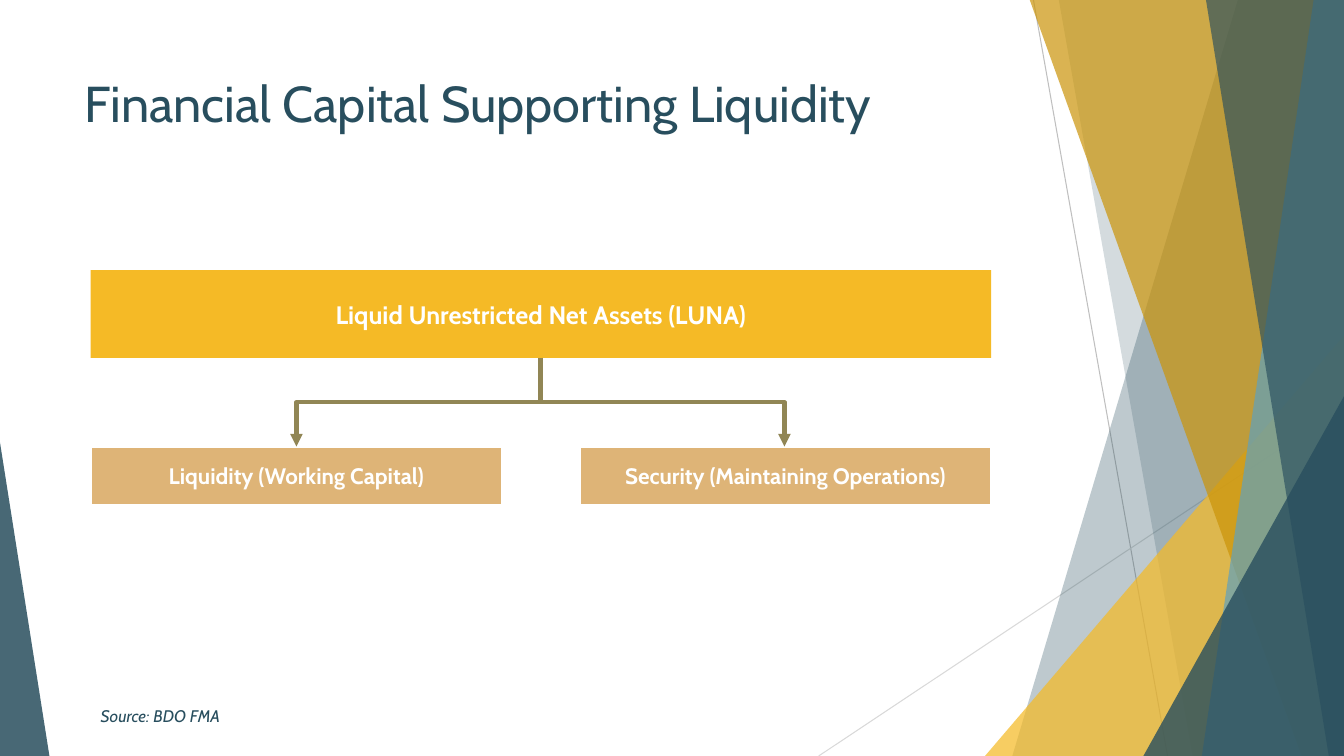
from dataclasses import dataclass

from lxml.etree import SubElement
from pptx import Presentation
from pptx.dml.color import RGBColor
from pptx.enum.shapes import MSO_CONNECTOR, MSO_SHAPE
from pptx.enum.text import MSO_ANCHOR, PP_ALIGN
from pptx.oxml.ns import qn
from pptx.util import Pt

PX = 9144  # EMU per px, 100 px to the inch
WIDTH, HEIGHT = 1333, 750


@dataclass(frozen=True)
class Theme:
    font: str = "Cabin"
    navy: str = "284E5E"
    gold: str = "F5BA26"
    ochre: str = "CB9409"
    sky: str = "61A1BC"
    tan: str = "DEB477"
    olive: str = "918655"
    white: str = "FFFFFF"
    grey: str = "BFBFBF"
    light_grey: str = "D9D9D9"
    title: int = 36
    heading: int = 18
    label: int = 16
    source: int = 12


class Deck:
    def __init__(self, theme):
        self.theme = theme
        self.prs = Presentation()
        self.prs.slide_width = WIDTH * PX
        self.prs.slide_height = HEIGHT * PX
        self.s = self.prs.slides.add_slide(self.prs.slide_layouts[6])

    def paint(self, sp, color, alpha=100):
        sp.shadow.inherit = False
        sp.line.fill.background()
        sp.fill.solid()
        sp.fill.fore_color.rgb = RGBColor.from_string(color)
        if alpha < 100:
            clr = sp._element.spPr.find(qn("a:solidFill"))[0]
            SubElement(clr, qn("a:alpha"), val=str(alpha * 1000))

    def set_text(self, sp, text, size, color, align=PP_ALIGN.LEFT,
                 anchor=MSO_ANCHOR.MIDDLE, bold=False, italic=False):
        tf = sp.text_frame
        tf.word_wrap = True
        tf.vertical_anchor = anchor
        p = tf.paragraphs[0]
        p.text = text
        p.alignment = align
        p.font.name, p.font.size = self.theme.font, Pt(size)
        p.font.bold, p.font.italic = bold, italic
        p.font.color.rgb = RGBColor.from_string(color)

    def text(self, x, y, w, h, text, size, **style):
        sp = self.s.shapes.add_textbox(x * PX, y * PX, w * PX, h * PX)
        self.set_text(sp, text, size, self.theme.navy, **style)

    def box(self, x, y, w, h, text, size, fill, outline=None):
        sp = self.s.shapes.add_shape(MSO_SHAPE.ROUNDED_RECTANGLE,
                                     x * PX, y * PX, w * PX, h * PX)
        sp.adjustments[0] = 0
        self.paint(sp, fill)
        if outline:
            sp.line.color.rgb = RGBColor.from_string(outline)
            sp.line.width = Pt(1.5)
        self.set_text(sp, text, size, self.theme.white, PP_ALIGN.CENTER, bold=True)

    def band(self, top_x, bottom_x, color, alpha):
        """Full-height band from a slanted left edge to the slide's right edge."""
        fb = self.s.shapes.build_freeform(top_x, -1, scale=PX)
        fb.add_line_segments([(WIDTH, -1), (WIDTH, HEIGHT), (bottom_x, HEIGHT)])
        self.paint(fb.convert_to_shape(), color, alpha)

    def triangle(self, x, y, w, apex, color, alpha):
        """Triangle that stands on the bottom edge of the slide."""
        sp = self.s.shapes.add_shape(MSO_SHAPE.ISOSCELES_TRIANGLE,
                                     x * PX, y * PX, w * PX, (HEIGHT - y) * PX)
        sp.adjustments[0] = apex
        self.paint(sp, color, alpha)

    def line(self, x1, y1, x2, y2, color, width=0.75, kind=MSO_CONNECTOR.STRAIGHT):
        c = self.s.shapes.add_connector(kind, x1 * PX, y1 * PX, x2 * PX, y2 * PX)
        c.line.color.rgb = RGBColor.from_string(color)
        c.line.width = Pt(width)
        SubElement(c._element.spPr, qn("a:effectLst"))
        return c

    def branch(self, x1, y1, x2, y2, color):
        """Elbow arrow that leaves downwards: a sideways elbow, turned."""
        cx, cy = (x1 + x2) // 2, (y1 + y2) // 2
        half_drop, half_run = (y2 - y1) // 2, abs(x2 - x1) // 2
        side = 1 if x2 > x1 else -1
        c = self.line(cx + side * half_drop, cy - half_run,
                      cx - side * half_drop, cy + half_run,
                      color, 3, MSO_CONNECTOR.ELBOW)
        turn = 270 if side > 0 else 90
        spPr = c._element.spPr
        spPr.find(qn("a:xfrm")).set("rot", str(turn * 60000))
        SubElement(spPr.find(qn("a:ln")), qn("a:tailEnd"), type="triangle")


def main():
    t = Theme()
    d = Deck(t)

    # Background facets, back to front
    d.line(1025, 0, 1158, HEIGHT, t.grey)
    d.line(WIDTH, 403, 812, HEIGHT, t.light_grey)
    d.band(1228, 1004, t.navy, 30)
    d.band(1050, 1183, t.navy, 20)
    d.triangle(977, 333, 356, 1, t.gold, 72)
    d.band(1021, 1291, t.ochre, 70)
    d.band(1303, 1192, t.sky, 70)
    d.band(1196, 1318, t.navy, 65)
    d.triangle(1134, 393, 199, 1, t.navy, 80)
    d.triangle(0, 439, 49, 0, t.navy, 85)

    # Title
    d.text(74, 67, 940, 144, "Financial Capital Supporting Liquidity", t.title,
           anchor=MSO_ANCHOR.TOP)

    # Net assets and the two parts they split into
    left, width, bottom = 90, 893, 355
    d.box(left, 268, width, bottom - 268,
          "Liquid Unrestricted Net Assets (LUNA)", t.heading, t.gold)
    part_y, part_w = 443, 408
    parts = {"Liquidity (Working Capital)": left,
             "Security (Maintaining Operations)": left + width - part_w}
    for label, x in parts.items():
        d.box(x, part_y, part_w, 58, label, t.label, t.tan, t.white)

    # Source
    d.text(left, 695, 347, 30, "Source: BDO FMA", t.source, italic=True)

    # Branches
    for x in parts.values():
        d.branch(left + width // 2, bottom, x + part_w // 2, part_y, t.olive)

    d.prs.save("out.pptx")


if __name__ == "__main__":
    main()
